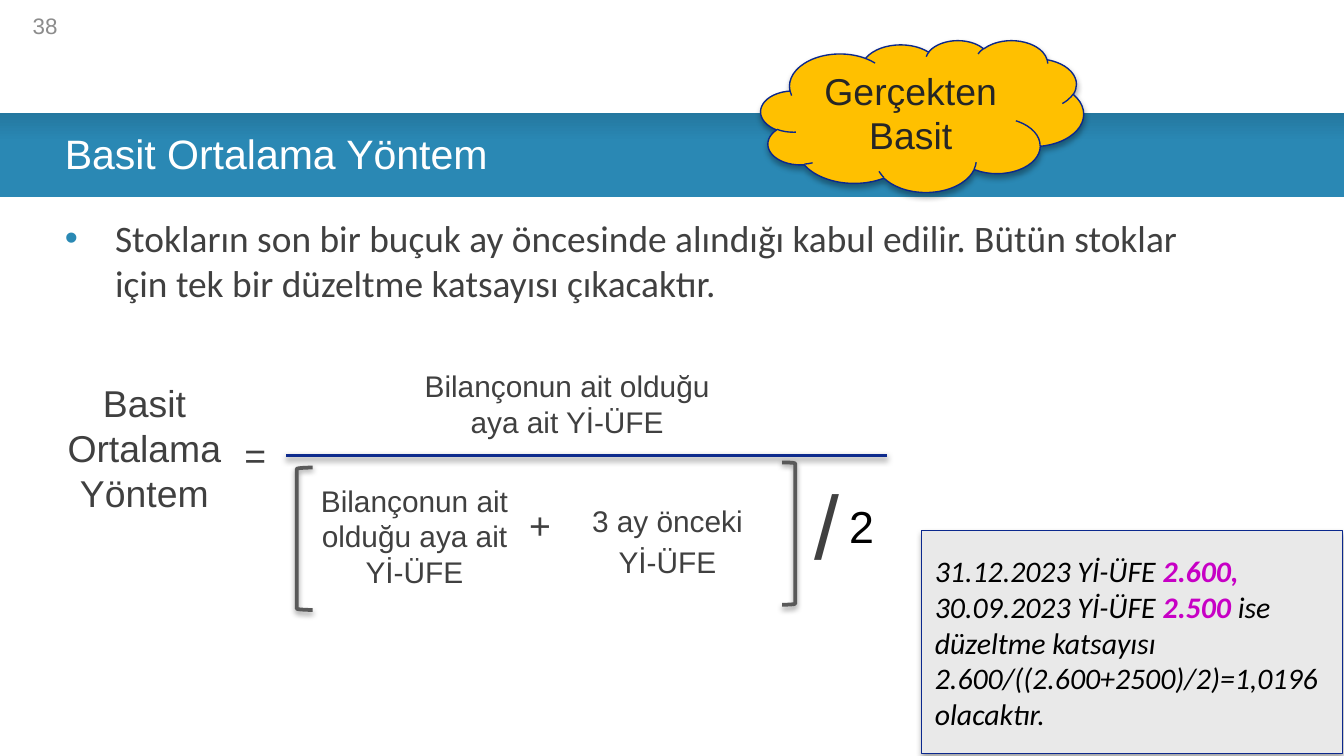
from lxml.etree import SubElement
from pptx import Presentation
from pptx.dml.color import RGBColor
from pptx.enum.shapes import MSO_CONNECTOR, MSO_SHAPE
from pptx.enum.text import MSO_ANCHOR, MSO_AUTO_SIZE, PP_ALIGN
from pptx.oxml.ns import qn
from pptx.util import Cm, Pt

COLORS = {
    "band_top": "24779F",
    "band": "2A88B4",
    "bullet": "2A89B4",
    "text": "404040",
    "cloud_text": "262626",
    "navy": "0E2B8D",
    "outline": "0B288D",
    "bracket": "595959",
    "cloud": "FFC000",
    "panel": "E9E9E9",
    "accent": "C700C5",
    "number": "8C8C8C",
    "black": "000000",
    "white": "FFFFFF",
}


def color(name):
    return RGBColor.from_string(COLORS[name])


class SlideBuilder:
    font = "Arial"
    body_font = "Calibri"

    def __init__(self, deck):
        self.page = deck.slides.add_slide(deck.slide_layouts[1])
        self.shapes = self.page.shapes

    def place(self, shape, area):
        shape.left, shape.top, shape.width, shape.height = map(Cm, area)

    def style_span(self, span, size, tint="text", font=None, bold=False, italic=False):
        span.font.name = font or self.font
        span.font.size = Pt(size)
        span.font.color.rgb = color(tint)
        span.font.bold = bold
        span.font.italic = italic

    def set_text(self, box, text, size, tint="text", align=PP_ALIGN.LEFT,
                 anchor=MSO_ANCHOR.TOP, font=None):
        frame = box.text_frame
        frame.text = text
        frame.word_wrap = True
        frame.auto_size = MSO_AUTO_SIZE.NONE
        frame.vertical_anchor = anchor
        for index, para in enumerate(frame.paragraphs):
            para.alignment = align
            para.space_before = Pt(0.2 * size if index else 0)
            for span in para.runs:
                self.style_span(span, size, tint, font)

    def shadow(self, shape, opacity, distance):
        properties = shape.element.spPr
        effects = SubElement(properties, qn("a:effectLst"))
        outer = SubElement(effects, qn("a:outerShdw"), blurRad=str(Pt(3.1)),
                           dist=str(Pt(distance)), dir="5400000", rotWithShape="0")
        tone = SubElement(outer, qn("a:srgbClr"), val=COLORS["black"])
        SubElement(tone, qn("a:alpha"), val=str(opacity * 1000))

    def title(self, area, text):
        box = self.shapes.title
        self.place(box, area)
        self.set_text(box, text, 22, "white", anchor=MSO_ANCHOR.MIDDLE)

    def bullets(self, area, text):
        box = self.page.placeholders[1]
        self.place(box, area)
        self.set_text(box, text, 20, font=self.body_font)
        for para in box.text_frame.paragraphs:
            properties = para._p.get_or_add_pPr()
            properties.set("marL", str(Cm(0.95)))
            properties.set("indent", str(-Cm(0.95)))
            tone = SubElement(properties, qn("a:buClr"))
            SubElement(tone, qn("a:srgbClr"), val=COLORS["bullet"])
            SubElement(properties, qn("a:buFont"), typeface=self.font)
            SubElement(properties, qn("a:buChar"), char="•")

    def label(self, area, text, size, **style):
        box = self.shapes.add_textbox(*map(Cm, area))
        self.set_text(box, text, size, **style)

    def band(self, area):
        band = self.shapes.add_shape(MSO_SHAPE.RECTANGLE, *map(Cm, area))
        band.shadow.inherit = False
        band.line.fill.background()
        band.fill.gradient()
        band.fill.gradient_angle = 270
        stops = zip(band.fill.gradient_stops, ("band_top", "band"), (0, 0.34))
        for stop, tint, position in stops:
            stop.color.rgb = color(tint)
            stop.position = position
        band.element.getparent().insert(2, band.element)

    def rule(self, left, right, top):
        line = self.shapes.add_connector(
            MSO_CONNECTOR.STRAIGHT, Cm(left), Cm(top), Cm(right), Cm(top))
        line.line.color.rgb = color("navy")
        line.line.width = Pt(2)
        self.shadow(line, 38, 1.6)

    def bracket(self, area, rotation=0):
        bracket = self.shapes.add_shape(MSO_SHAPE.LEFT_BRACKET, *map(Cm, area))
        bracket.rotation = rotation
        bracket.fill.background()
        bracket.line.color.rgb = color("bracket")
        bracket.line.width = Pt(2)
        self.shadow(bracket, 38, 1.6)

    def filled(self, kind, area, fill):
        shape = self.shapes.add_shape(kind, *map(Cm, area))
        shape.fill.solid()
        shape.fill.fore_color.rgb = color(fill)
        shape.line.color.rgb = color("outline")
        shape.line.width = Pt(0.75)
        self.shadow(shape, 35, 1.8)
        return shape

    def cloud(self, area, text):
        cloud = self.filled(MSO_SHAPE.CLOUD, area, "cloud")
        self.set_text(cloud, text, 20, "cloud_text", PP_ALIGN.CENTER, MSO_ANCHOR.MIDDLE)

    def example(self, area, paragraphs):
        panel = self.filled(MSO_SHAPE.RECTANGLE, area, "panel")
        frame = panel.text_frame
        frame.word_wrap = True
        frame.vertical_anchor = MSO_ANCHOR.MIDDLE
        for index, parts in enumerate(paragraphs):
            para = frame.add_paragraph() if index else frame.paragraphs[0]
            para.alignment = PP_ALIGN.LEFT
            for text, strong in parts:
                span = para.add_run()
                span.text = text
                self.style_span(span, 16, "accent" if strong else "black",
                                self.body_font, bold=strong, italic=True)


def main():
    deck = Presentation()
    deck.slide_width, deck.slide_height = Cm(25.4), Cm(14.29)
    slide = SlideBuilder(deck)
    center = PP_ALIGN.CENTER

    slide.band((0, 2.13, 25.4, 1.6))
    slide.title((0.97, 2.21, 22.86, 1.35), "Basit Ortalama Yöntem")
    slide.bullets((0.97, 3.94, 21.62, 2.36),
                  "Stokların son bir buçuk ay öncesinde alındığı kabul edilir. "
                  "Bütün stoklar için tek bir düzeltme katsayısı çıkacaktır.")

    index_text = "Bilançonun ait olduğu aya ait Yİ-ÜFE"
    slide.label((0.71, 7.06, 4.04, 2.77), "Basit Ortalama Yöntem", 20, align=center)
    slide.label((4.37, 8.05, 1.07, 1.04), "=", 20)
    slide.label((7.67, 6.83, 6.1, 1.63), index_text, 16, align=center)
    slide.rule(5.41, 16.76, 8.61)
    slide.label((5.41, 8.99, 4.85, 2.18), index_text, 16, align=center)
    slide.label((9.75, 9.37, 1.07, 1.04), "+", 20)
    slide.label((10.19, 9.37, 4.85, 1.37), "3 ay önceki\nYİ-ÜFE", 16, align=center)
    slide.bracket((5.61, 8.84, 0.3, 2.69))
    slide.bracket((14.78, 8.74, 0.25, 2.69), 180)
    slide.label((15.14, 8.76, 1.07, 1.98), "/", 48)
    slide.label((15.8, 9.3, 1.07, 1.27), "2", 24, tint="black")

    slide.cloud((14.38, 0.76, 6.1, 2.87), "Gerçekten Basit")
    slide.example((17.42, 10.03, 7.95, 4.22), [
        [("31.12.2023 Yİ-ÜFE ", False), ("2.600,", True),
         (" 30.09.2023 Yİ-ÜFE ", False), ("2.500 ", True),
         ("ise düzeltme katsayısı 2.600/((2.600+2500)/2)=1,0196", False)],
        [("olacaktır.", False)],
    ])
    slide.label((0.1, 0.1, 1.24, 0.76), "38", 12, tint="number",
                align=PP_ALIGN.RIGHT, anchor=MSO_ANCHOR.MIDDLE)
    deck.save("out.pptx")


if __name__ == "__main__":
    main()
